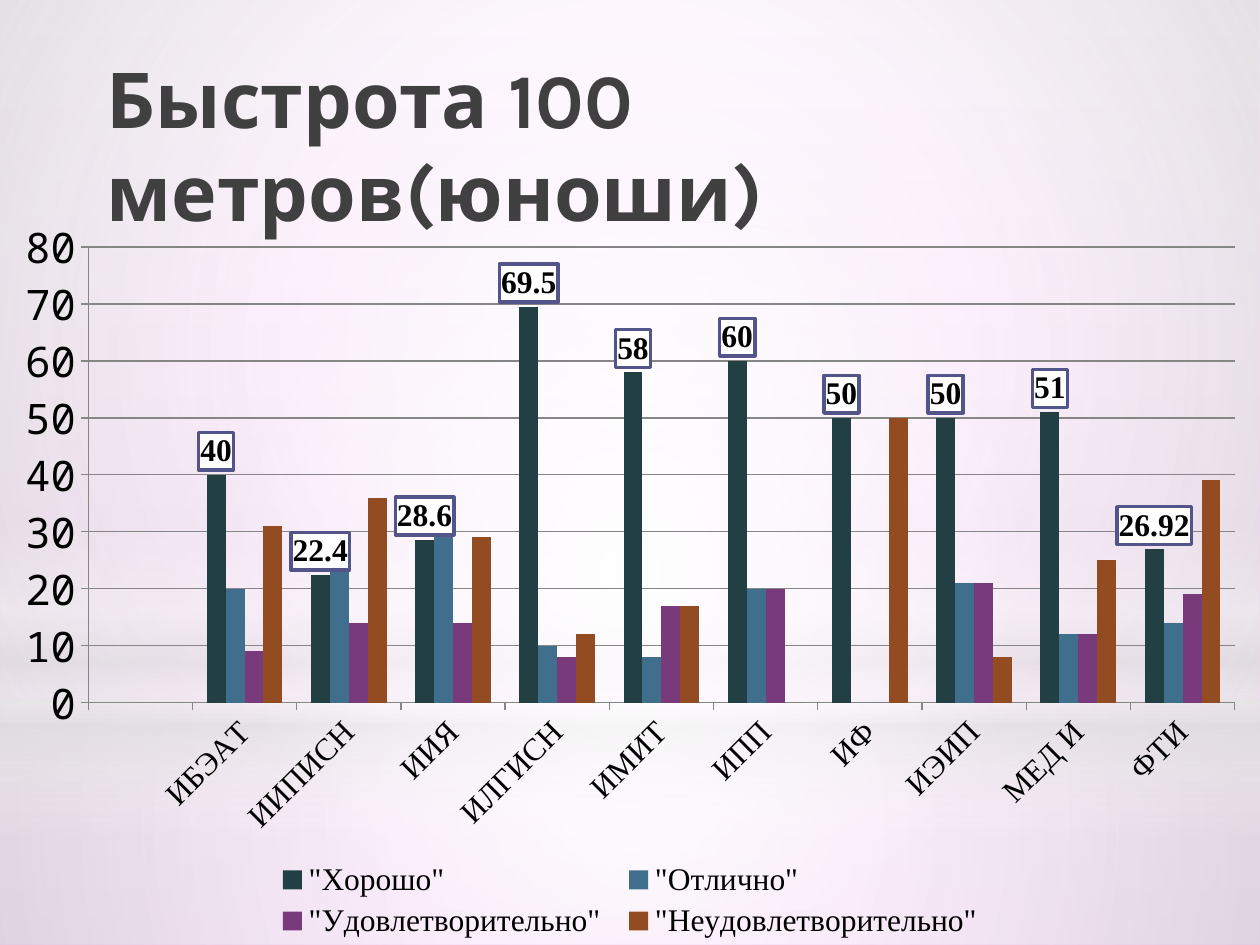
from lxml import etree
from pptx import Presentation, util as u
from pptx.chart.data import CategoryChartData
from pptx.dml.color import RGBColor
from pptx.enum import chart as ch, shapes, text
from pptx.oxml import parse_xml
from pptx.oxml.ns import nsdecls, qn

W, H = 10, 7.5
SERIF = "Times New Roman"
CATS = ["", "ИБЭАТ", "ИИПИСН", "ИИЯ", "ИЛГИСН", "ИМИТ", "ИПП", "ИФ", "ИЭИП", "МЕД И", "ФТИ"]
SERIES = [
    ('"Хорошо"', "224043", [None, 40, 22.4, 28.6, 69.5, 58, 60, 50, 50, 51, 26.92]),
    ('"Отлично"', "406F8D", [None, 20, 28, 29, 10, 8, 20, 0, 21, 12, 14]),
    ('"Удовлетворительно"', "783A7A", [None, 9, 14, 14, 8, 17, 20, 0, 21, 12, 19]),
    ('"Неудовлетворительно"', "934C22", [None, 31, 36, 29, 12, 17, 0, 50, 8, 25, 39]),
]
BACKDROP = [(0, "EAACED", 100), (35, "EFC5F1", 100), (100, "FAE8FB", 100)]
RECT, OVAL = shapes.MSO_SHAPE.RECTANGLE, shapes.MSO_SHAPE.OVAL
LAYERS = [
    (RECT, (0, 0.744, 1, 0.256), [(0, "FFFFFF", 91), (37, "FFFFFF", 76), (100, "DEDEDE", 79)], None),
    (RECT, (0, 0, 1, 0.744), [(0, "FFFFFF", 89), (48, "FFFFFF", 62), (100, "DEDEDE", 79)], None),
    (RECT, (0, 0.55, 1, 0.333), [(0, "FFFFFF", 0), (29, "FFFFFF", 30), (45, "DEDEDE", 40),
                                 (55, "FFFFFF", 26), (65, "DEDEDE", 60), (100, "FFFFFF", 0)], 90),
    (OVAL, (0, 0.233, 1, 0.744), [(0, "FFFFFF", 100), (56, "FFFFFF", 0)], None),
]


def color(value):
    """Turn a hex string into a colour."""
    return RGBColor.from_string(value)


def place(box):
    """Turn shares of the slide's size into lengths."""
    return [u.Inches(share * size) for share, size in zip(box, (W, H, W, H))]


def set_font(font, name, size, value="000000", bold=False):
    """Set the face, size, colour and weight of a font."""
    font.name, font.size, font.bold = name, u.Pt(size), bold
    font.color.rgb = color(value)


def set_gradient(fill, owner, stops, angle=None):
    """Fill with a linear gradient, or a circular one when there is no angle."""
    fill.gradient()
    old = owner.xpath(".//a:gradFill")[0]
    marks = "".join(
        f'<a:gs pos="{pos * 1000}"><a:srgbClr val="{value}">'
        f'<a:alpha val="{alpha * 1000}"/></a:srgbClr></a:gs>'
        for pos, value, alpha in stops)
    if angle is None:
        shade = '<a:path path="circle"><a:fillToRect l="50000" t="50000" r="50000" b="50000"/></a:path>'
    else:
        shade = f'<a:lin ang="{angle * 60000}" scaled="0"/>'
    new = parse_xml(f'<a:gradFill {nsdecls("a")} rotWithShape="1"><a:gsLst>{marks}</a:gsLst>{shade}</a:gradFill>')
    old.getparent().replace(old, new)


def set_layout(parent, before, box, inner=False):
    """Pin a chart part to a box given in shares of the chart."""
    for old in parent.findall(qn("c:layout")):
        parent.remove(old)
    layout = etree.Element(qn("c:layout"))
    manual = etree.SubElement(layout, qn("c:manualLayout"))
    target = [("layoutTarget", "inner")] if inner else []
    modes = [("xMode", "edge"), ("yMode", "edge")]
    for tag, value in target + modes + list(zip("xywh", box)):
        etree.SubElement(manual, qn(f"c:{tag}")).set("val", str(value))
    before.addprevious(layout)


def add_backdrop(s):
    """Draw the tinted background and its soft light layers."""
    set_gradient(s.background.fill, s._element, BACKDROP, 270)
    for kind, box, stops, angle in LAYERS:
        sp = s.shapes.add_shape(kind, *place(box))
        sp.shadow.inherit = False
        sp.line.fill.background()
        set_gradient(sp.fill, sp._element.spPr, stops, angle)


def add_title(s, box):
    """Write the slide title."""
    tf = s.shapes.add_textbox(*place(box)).text_frame
    tf.word_wrap = True
    tf.vertical_anchor = text.MSO_ANCHOR.MIDDLE
    tf.text = "Быстрота 100 метров(юноши)"
    set_font(tf.paragraphs[0].runs[0].font, "Karla", 44, "404040", True)


def add_labels(plot_series):
    """Show framed values above the columns of a series."""
    labels = plot_series.data_labels
    labels.show_value = True
    labels.position = ch.XL_LABEL_POSITION.OUTSIDE_END
    set_font(labels.font, SERIF, 18, bold=True)
    frame = parse_xml(
        f'<c:spPr {nsdecls("c", "a")}><a:solidFill><a:srgbClr val="FFFFFF"/></a:solidFill>'
        '<a:ln w="25400"><a:solidFill><a:srgbClr val="53548A"/></a:solidFill></a:ln></c:spPr>')
    labels._element.find(qn("c:txPr")).addprevious(frame)


def style_axes(chart):
    """Set the scale, lines and fonts of both axes."""
    value_axis, category_axis = chart.value_axis, chart.category_axis
    value_axis.minimum_scale, value_axis.maximum_scale, value_axis.major_unit = 0, 80, 10
    value_axis.has_major_gridlines = True
    for line in (value_axis.major_gridlines.format.line, value_axis.format.line, category_axis.format.line):
        line.color.rgb = color("868686")
        line.width = u.Pt(0.75)
    for axis, name, size in ((value_axis, "Noto Sans Mono", 24), (category_axis, SERIF, 18)):
        axis.major_tick_mark = ch.XL_TICK_MARK.OUTSIDE
        set_font(axis.tick_labels.font, name, size)
    category_axis._element.find(qn("c:txPr")).find(qn("a:bodyPr")).set("rot", "-2700000")


def add_results(s, box):
    """Chart the share of each grade by institute."""
    data = CategoryChartData()
    data.categories = CATS
    for name, _, values in SERIES:
        data.add_series(name, values)
    chart = s.shapes.add_chart(ch.XL_CHART_TYPE.COLUMN_CLUSTERED, *place(box), data).chart
    chart.has_title = False
    set_font(chart.font, "Karla", 10)
    plot = chart.plots[0]
    plot.gap_width, plot.vary_by_categories = 150, False
    for plot_series, (_, value, _) in zip(plot.series, SERIES):
        plot_series.format.fill.solid()
        plot_series.format.fill.fore_color.rgb = color(value)
    add_labels(plot.series[0])
    style_axes(chart)
    chart.has_legend = True
    legend = chart.legend
    legend.position = ch.XL_LEGEND_POSITION.BOTTOM
    legend.include_in_layout = False
    set_font(legend.font, SERIF, 18)
    set_layout(legend._element, legend._element.find(qn("c:overlay")), (0.21, 0.88, 0.58, 0.12))
    set_layout(plot._element.getparent(), plot._element, (0.07, 0.058, 0.91, 0.615), True)


def main():
    """Build the slide and save it."""
    prs = Presentation()
    prs.slide_width, prs.slide_height = u.Inches(W), u.Inches(H)
    s = prs.slides.add_slide(prs.slide_layouts[6])
    add_backdrop(s)
    add_title(s, (0.075, 0.038, 0.913, 0.229))
    add_results(s, (0, 0.216, 1, 0.784))
    prs.save("out.pptx")


if __name__ == "__main__":
    main()
